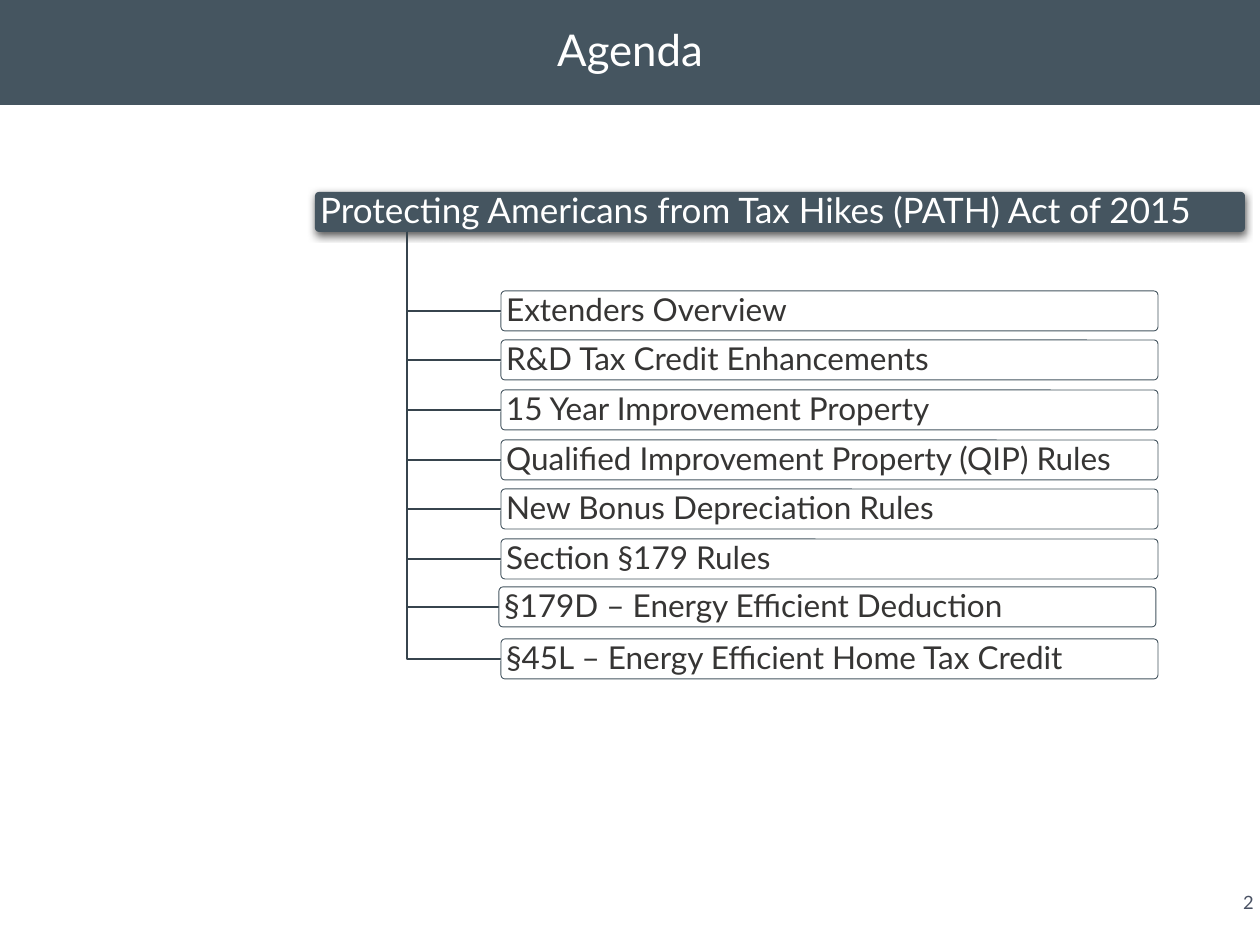
"""Build the agenda slide with its tree of tax topics."""
from lxml import etree
from pptx import Presentation
from pptx.dml.color import RGBColor
from pptx.enum.shapes import MSO_SHAPE
from pptx.enum.text import MSO_ANCHOR, MSO_AUTO_SIZE, PP_ALIGN
from pptx.oxml import parse_xml
from pptx.oxml.ns import nsdecls, qn
from pptx.util import Pt

ROUND = MSO_SHAPE.ROUNDED_RECTANGLE
MIDDLE, TOP = MSO_ANCHOR.MIDDLE, MSO_ANCHOR.TOP
FIXED = MSO_AUTO_SIZE.NONE
LEFT, CENTER = PP_ALIGN.LEFT, PP_ALIGN.CENTER
SLATE = RGBColor(0x45, 0x55, 0x60)
STEEL = RGBColor(0x37, 0x44, 0x4D)
INK = RGBColor(0x36, 0x35, 0x34)
NAVY = RGBColor(0x49, 0x51, 0x63)
WHITE = RGBColor(0xFF, 0xFF, 0xFF)
SCALE = 914400 / 126
HEAD = "Protecting Americans from Tax Hikes (PATH) Act of 2015"
TOPICS = [
    "Extenders Overview",
    "R&D Tax Credit Enhancements",
    "15 Year Improvement Property",
    "Qualified Improvement Property (QIP) Rules",
    "New Bonus Depreciation Rules",
    "Section §179 Rules",
    "§179D – Energy Efficient Deduction",
    "§45L – Energy Efficient Home Tax Credit",
]
SHADOW = (
    f'<a:effectLst {nsdecls("a")}><a:outerShdw blurRad="57150" dist="19050" '
    'dir="5400000" algn="ctr" rotWithShape="0"><a:srgbClr val="000000">'
    '<a:alpha val="63000"/></a:srgbClr></a:outerShdw></a:effectLst>'
)


def emu(px):
    """Turn px into EMU."""
    return round(px * SCALE)


def write(shape, text, size=18, color=INK, align=LEFT, anchor=MIDDLE,
          inset=(4, 4), wrap=True, lead=0.9, font="Lato"):
    """Put one formatted paragraph into a shape."""
    frame = shape.text_frame
    frame.text = text
    frame.auto_size = FIXED
    frame.word_wrap = wrap
    frame.vertical_anchor = anchor
    frame.margin_left = frame.margin_right = emu(inset[0])
    frame.margin_top = frame.margin_bottom = emu(inset[1])
    para = frame.paragraphs[0]
    para.alignment = align
    para.line_spacing = lead
    run = para.runs[0].font
    run.name, run.size, run.color.rgb = font, Pt(size), color


class Deck:
    """Hold the style and the current slide."""

    def __init__(self, wide, high):
        """Start a deck with one title-only slide."""
        self.prs = Presentation()
        self.prs.slide_width, self.prs.slide_height = emu(wide), emu(high)
        self.slide = self.prs.slides.add_slide(self.prs.slide_layouts[5])
        self.shapes = self.slide.shapes

    def title(self, text, wide, high):
        """Fill the title band across the top."""
        band = self.shapes.title
        band.left, band.top = 0, 0
        band.width, band.height = emu(wide), emu(high)
        band.fill.solid()
        band.fill.fore_color.rgb = SLATE
        write(band, text, size=25, color=WHITE, align=CENTER, inset=(13, 6))

    def box(self, x, y, wide, high, fill):
        """Add a rounded box with a plain fill."""
        box = self.shapes.add_shape(ROUND, *map(emu, (x, y, wide, high)))
        box.adjustments[0] = 0.1
        box.shadow.inherit = False
        box.fill.solid()
        box.fill.fore_color.rgb = fill
        return box

    def header(self, text, *place):
        """Add the dark root box with its shadow."""
        box = self.box(*place, SLATE)
        box.line.fill.background()
        props = box._element.spPr
        props.replace(props.find(qn("a:effectLst")), parse_xml(SHADOW))
        write(box, text, size=20, color=WHITE)

    def topic(self, text, *place):
        """Add an outlined topic box."""
        box = self.box(*place, WHITE)
        tint = box._element.spPr.find(qn("a:solidFill"))[0]
        etree.SubElement(tint, qn("a:alpha"), val="90000")
        box.line.color.rgb = SLATE
        box.line.width = Pt(0.5)
        write(box, text)

    def branch(self, x, y, right, low):
        """Draw an elbow down from the root and across to a topic."""
        path = self.shapes.build_freeform(x, y, scale=SCALE)
        path.add_line_segments([(x, low), (right, low)], close=False)
        elbow = path.convert_to_shape()
        elbow.shadow.inherit = False
        elbow.fill.background()
        elbow.line.color.rgb = STEEL
        elbow.line.width = Pt(1)

    def label(self, text, *place, **style):
        """Add a text box."""
        write(self.shapes.add_textbox(*map(emu, place)), text, **style)


def main():
    """Lay out the slide and save it."""
    deck = Deck(1260, 945)
    deck.title("Agenda", 1260, 105)
    deck.label("2", 1237, 891, 23, 23, size=10.5, color=NAVY, align=CENTER,
               anchor=TOP, inset=(0, 0), wrap=False, lead=1.0)
    high = 40
    deck.header(HEAD, 315, 192, 930, high)
    for row, text in enumerate(TOPICS):
        nudge = 2 if row == 6 else 0
        left, top = 501 - nudge, 291 + row * 348 // 7 - nudge
        deck.branch(407, 192 + high, left, top + high // 2)
        deck.topic(text, left, top, 657, high)
    deck.prs.save("out.pptx")


if __name__ == "__main__":
    main()
